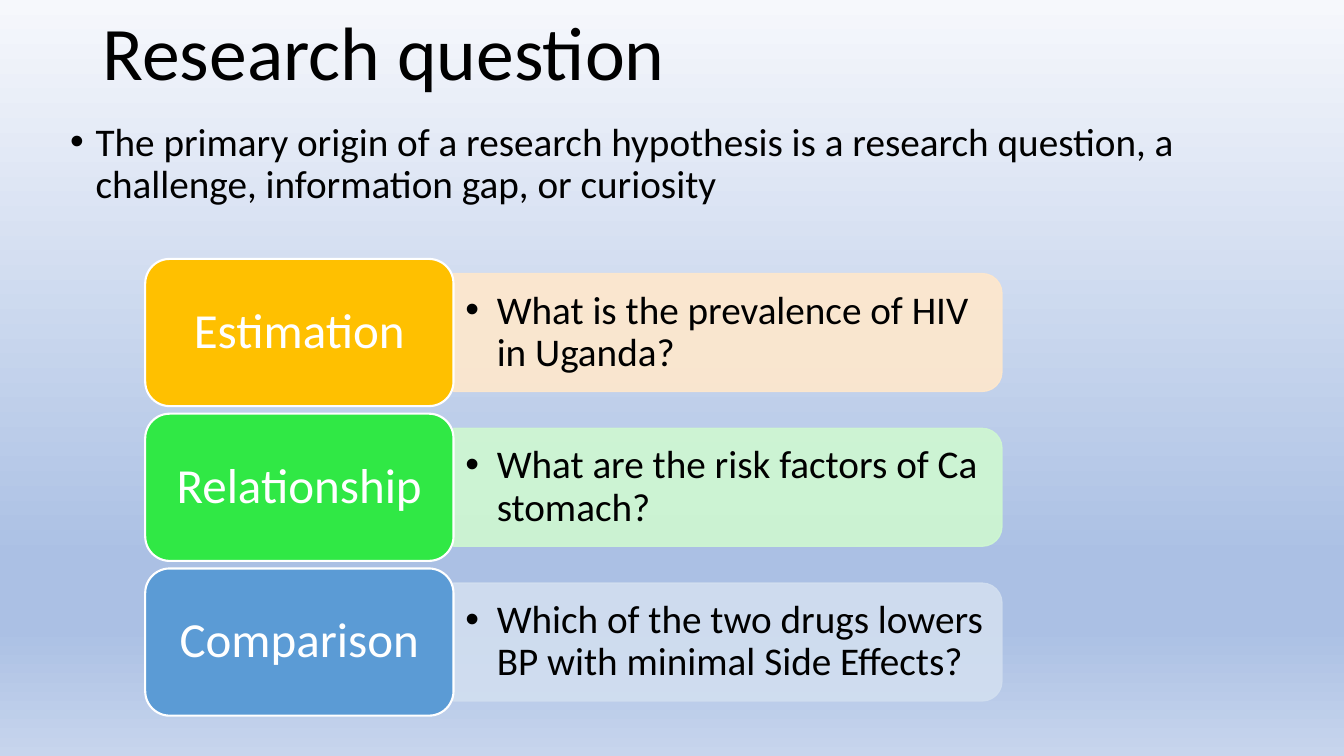
from lxml.etree import SubElement
from pptx import Presentation
from pptx.dml.color import RGBColor
from pptx.enum.shapes import MSO_SHAPE
from pptx.enum.text import MSO_ANCHOR, PP_ALIGN
from pptx.oxml.ns import qn
from pptx.util import Cm, Pt


def color(value):
    """Turn a hex string into a colour."""
    return RGBColor.from_string(value)


class SlideBuilder:
    """Hold the style and the current slide."""

    font = "Calibri"
    ink = "000000"
    white = "FFFFFF"

    def __init__(self, page):
        """Remember the page to draw on."""
        self.page = page

    def background(self, stops):
        """Fill the page with a gradient running downwards."""
        fill = self.page.background.fill
        fill.gradient()
        fill.gradient_angle = 270
        stop_list = self.page._element.find(".//" + qn("a:gsLst"))
        for old_stop in list(stop_list):
            stop_list.remove(old_stop)
        for percent, value in stops:
            stop = SubElement(stop_list, qn("a:gs"), pos=str(percent * 1000))
            SubElement(stop, qn("a:srgbClr"), val=value)

    def add_text(self, box, text, size, value, align=PP_ALIGN.LEFT, spacing=0.9):
        """Put one paragraph into a shape."""
        para = box.text_frame.paragraphs[0]
        para.alignment = align
        para.line_spacing = spacing
        span = para.add_run()
        span.text = text
        span.font.name = self.font
        span.font.size = Pt(size)
        span.font.color.rgb = color(value)
        return para

    def title(self, text, left, top, width, height):
        """Add the heading."""
        box = self.page.shapes.add_textbox(Cm(left), Cm(top), Cm(width), Cm(height))
        box.text_frame.word_wrap = False
        self.add_text(box, text, 54, self.ink, spacing=1.0)

    def bullet(self, text, left, top, width, height, indent, margins=(0.25, 0.13),
               anchor=MSO_ANCHOR.TOP, space_before=0):
        """Add a text box with one bulleted paragraph."""
        box = self.page.shapes.add_textbox(Cm(left), Cm(top), Cm(width), Cm(height))
        frame = box.text_frame
        frame.word_wrap = True
        frame.vertical_anchor = anchor
        frame.margin_left = frame.margin_right = Cm(margins[0])
        frame.margin_top = frame.margin_bottom = Cm(margins[1])
        para = self.add_text(box, text, 28, self.ink)
        para.space_before = Pt(space_before)
        properties = para._p.get_or_add_pPr()
        properties.set("marL", str(Cm(indent)))
        properties.set("indent", str(-Cm(indent)))
        SubElement(properties, qn("a:buFont"), typeface="Arial")
        SubElement(properties, qn("a:buChar"), char="•")

    def panel(self, left, middle, width, height, value):
        """Add a translucent panel rounded on its right side."""
        shape = self.page.shapes.add_shape(
            MSO_SHAPE.ROUND_2_SAME_RECTANGLE, Cm(left + (width - height) / 2),
            Cm(middle - width / 2), Cm(height), Cm(width))
        shape.rotation = 90
        shape.shadow.inherit = False
        shape.line.width = Pt(1)
        for fill in (shape.fill, shape.line.fill):
            fill.solid()
            fill.fore_color.rgb = color(value)
        for tint in shape._element.spPr.iter(qn("a:srgbClr")):
            SubElement(tint, qn("a:alpha"), val="90000")

    def label(self, text, left, middle, width, height, value):
        """Add a rounded label with centred text."""
        shape = self.page.shapes.add_shape(
            MSO_SHAPE.ROUNDED_RECTANGLE, Cm(left), Cm(middle - height / 2),
            Cm(width), Cm(height))
        shape.shadow.inherit = False
        shape.fill.solid()
        shape.fill.fore_color.rgb = color(value)
        shape.line.color.rgb = color(self.white)
        shape.line.width = Pt(1.5)
        frame = shape.text_frame
        frame.word_wrap = True
        frame.vertical_anchor = MSO_ANCHOR.MIDDLE
        frame.margin_left = frame.margin_right = Cm(0.38)
        frame.margin_top = frame.margin_bottom = Cm(0.18)
        self.add_text(shape, text, 35, self.white, PP_ALIGN.CENTER)


def main():
    """Build the slide and save it."""
    deck = Presentation()
    deck.slide_width, deck.slide_height = Cm(33.87), Cm(19.05)
    builder = SlideBuilder(deck.slides.add_slide(deck.slide_layouts[6]))
    builder.background([(0, "F6F8FC"), (74, "ABC0E4"), (83, "ABC0E4"), (100, "C7D5ED")])
    builder.bullet(
        "The primary origin of a research hypothesis is a research question, a "
        "challenge, information gap, or curiosity",
        1.52, 2.95, 30.02, 14.22, 0.64, space_before=10)
    builder.title("Research question", 2.34, 0, 15.29, 2.57)

    questions = [
        ("Estimation", "What is the prevalence of HIV in Uganda?", "FFC000", "FFE8CC"),
        ("Relationship", "What are the risk factors of Ca stomach?", "30E845", "CFF8D1"),
        ("Comparison", "Which of the two drugs lowers BP with minimal Side Effects?",
         "5B9BD5", "D2DFF0"),
    ]
    label_left, label_width, text_height = 3.66, 7.77, 2.69
    panel_left = label_left + label_width
    for row, (name, question, strong, pale) in enumerate(questions):
        middle = 8.38 + 3.9 * row
        builder.panel(panel_left, middle, 13.82, 2.97, pale)
        builder.bullet(question, panel_left, middle - text_height / 2, 13.69, text_height,
                       0.79, (0.3, 0.15), MSO_ANCHOR.MIDDLE)
        builder.label(name, label_left, middle, label_width, 3.71, strong)
    deck.save("out.pptx")


if __name__ == "__main__":
    main()
